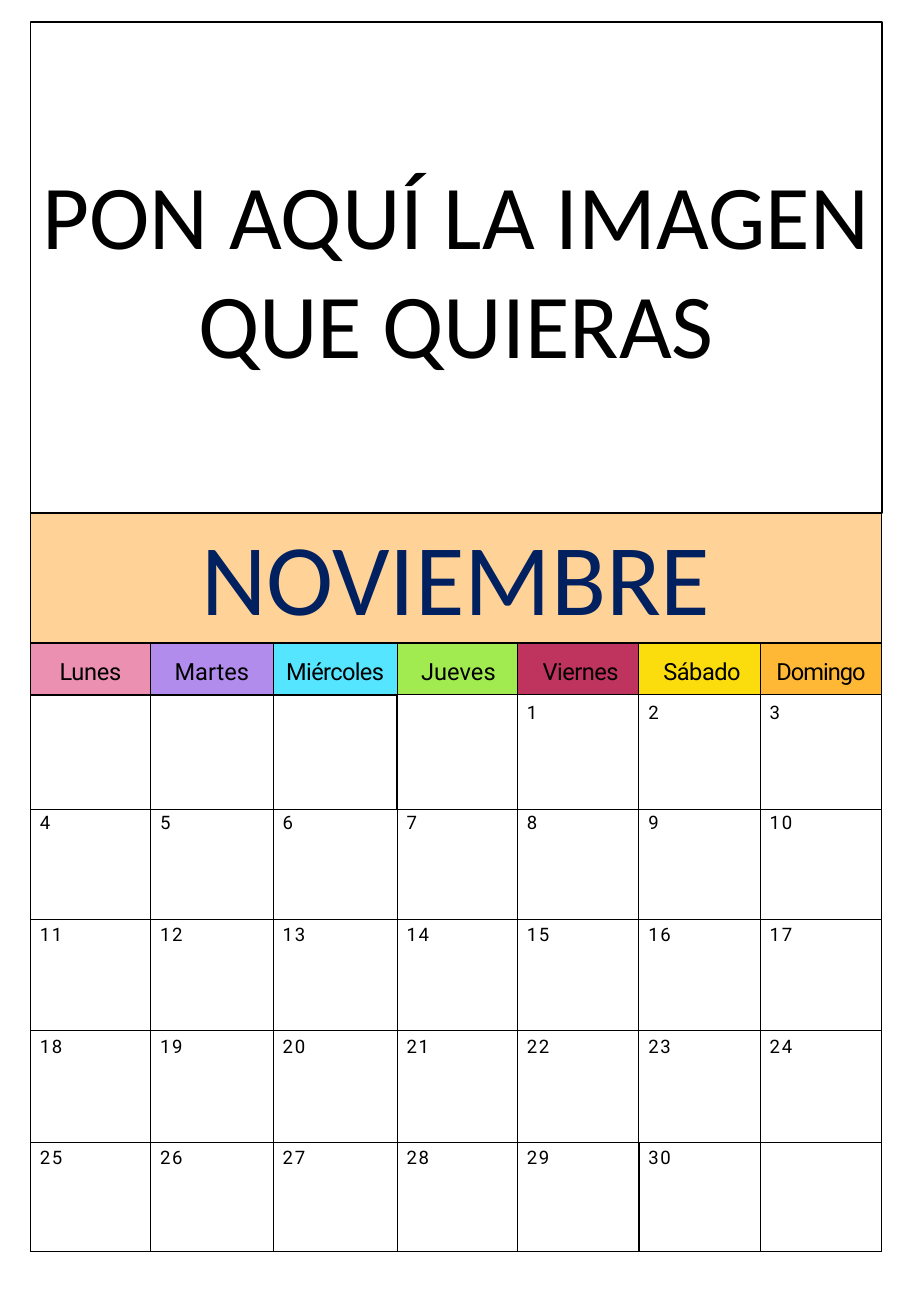
from lxml import etree
from pptx import Presentation
from pptx.dml.color import RGBColor
from pptx.enum import shapes, text
from pptx.oxml import ns
from pptx.util import Pt

BLACK = RGBColor(0, 0, 0)
WHITE = RGBColor(255, 255, 255)
NAVY = RGBColor(0x00, 0x20, 0x60)
PEACH = RGBColor(0xFF, 0xD2, 0x97)

PROMPT = "PON AQUÍ LA IMAGEN QUE QUIERAS"
MONTH = "NOVIEMBRE"
# name, fill, letter spacing, indent
WEEKDAYS = [
    ("Lunes", RGBColor(0xEB, 0x90, 0xB0), -0.2, 0),
    ("Martes", RGBColor(0xB1, 0x8C, 0xEC), 0, 0),
    ("Miércoles", RGBColor(0x55, 0xE5, 0xFF), -0.4, 0),
    ("Jueves", RGBColor(0xA1, 0xEB, 0x51), 0, 1.5),
    ("Viernes", RGBColor(0xBE, 0x34, 0x5E), -0.3, 3),
    ("Sábado", RGBColor(0xFB, 0xDD, 0x0D), -0.3, 3),
    ("Domingo", RGBColor(0xFF, 0xB8, 0x36), -0.6, 0),
]
FIRST_COLUMN, DAY_COUNT = 4, 30

LEFT, WIDTH = 18, 504.7
IMAGE_TOP, IMAGE_HEIGHT = 13, 290.9
MONTH_TOP, MONTH_HEIGHT = 303.9, 76
CALENDAR_TOP = 381.4
COLUMN_WIDTHS = [71.3, 72.7, 73.4, 71.3, 72, 72, 72]
ROW_HEIGHTS = [30.3, 68.1, 65.1, 66, 66, 64.8]
DAY_TOP_MARGINS = [4.3, 1.4, 2.9, 2.9, 2.9]
THIN, THICK = 0.75, 1
THICK_CELLS = {(1, 0), (1, 1), (1, 2), (5, 5), (5, 6)}
SIDES = {"L": (0, -1), "R": (0, 1), "T": (-1, 0), "B": (1, 0)}


def write_text(frame, content, size, font="Roboto", color=BLACK,
               align=text.PP_ALIGN.CENTER, before=0, indent=0, spacing=0):
    paragraph = frame.paragraphs[0]
    paragraph.alignment = align
    paragraph.space_before = Pt(before)
    properties = paragraph._p.get_or_add_pPr()
    properties.set("marL", str(Pt(indent)))
    properties.set("indent", "0")
    run = paragraph.add_run()
    run.text = content
    run.font.size = Pt(size)
    run.font.name = font
    run.font.color.rgb = color
    run._r.get_or_add_rPr().set("spc", str(round(spacing * 100)))


def set_borders(cell, widths):
    """Draw black borders; widths maps L, R, T and B to points."""
    properties = cell._tc.get_or_add_tcPr()
    for position, (side, width) in enumerate(widths.items()):
        line = etree.Element(ns.qn(f"a:ln{side}"), w=str(Pt(width)))
        fill = etree.SubElement(line, ns.qn("a:solidFill"))
        etree.SubElement(fill, ns.qn("a:srgbClr"), val=str(BLACK))
        properties.insert(position, line)


def add_grid(slide, top, column_widths, row_heights):
    table = slide.shapes.add_table(
        len(row_heights), len(column_widths), Pt(LEFT), Pt(top),
        Pt(sum(column_widths)), Pt(sum(row_heights))).table
    table.first_row = table.horz_banding = False
    for column, width in zip(table.columns, column_widths):
        column.width = Pt(width)
    for row, height in zip(table.rows, row_heights):
        row.height = Pt(height)
    return table


def style_cell(cell, fill, widths, top_margin, anchor):
    cell.fill.solid()
    cell.fill.fore_color.rgb = fill
    cell.margin_left = cell.margin_right = cell.margin_bottom = 0
    cell.margin_top = Pt(top_margin)
    cell.vertical_anchor = anchor
    set_borders(cell, widths)


def calendar_borders(row, column):
    """An edge is thick when a cell on either side of it is thick."""
    return {
        side: THICK if {(row, column), (row + down, column + right)} & THICK_CELLS else THIN
        for side, (down, right) in SIDES.items()
    }


def add_month(slide):
    cell = add_grid(slide, MONTH_TOP, [WIDTH], [MONTH_HEIGHT]).cell(0, 0)
    style_cell(cell, PEACH, {"L": THIN, "R": THIN, "T": THIN, "B": THICK},
               3.6, text.MSO_ANCHOR.MIDDLE)
    write_text(cell.text_frame, MONTH, 60, font="Calibri", color=NAVY, before=4.2)


def add_calendar(slide):
    table = add_grid(slide, CALENDAR_TOP, COLUMN_WIDTHS, ROW_HEIGHTS)
    for column, (name, fill, spacing, indent) in enumerate(WEEKDAYS):
        cell = table.cell(0, column)
        style_cell(cell, fill, calendar_borders(0, column), 3.6, text.MSO_ANCHOR.MIDDLE)
        write_text(cell.text_frame, name, 14, before=4.2, indent=indent, spacing=spacing)
    for week, top_margin in enumerate(DAY_TOP_MARGINS):
        row = week + 1
        for column in range(len(WEEKDAYS)):
            cell = table.cell(row, column)
            style_cell(cell, WHITE, calendar_borders(row, column),
                       top_margin, text.MSO_ANCHOR.TOP)
            day = week * len(WEEKDAYS) + column - FIRST_COLUMN + 1
            if 1 <= day <= DAY_COUNT:
                write_text(cell.text_frame, str(day), 11, align=text.PP_ALIGN.LEFT,
                           before=4.8, indent=5.6, spacing=1)


def add_image_area(slide):
    area = slide.shapes.add_shape(shapes.MSO_SHAPE.RECTANGLE, Pt(LEFT), Pt(IMAGE_TOP),
                                  Pt(WIDTH), Pt(IMAGE_HEIGHT))
    area.shadow.inherit = False
    area.fill.solid()
    area.fill.fore_color.rgb = WHITE
    area.line.color.rgb = BLACK
    area.line.width = Pt(THICK)
    area.text_frame.word_wrap = True
    area.text_frame.vertical_anchor = text.MSO_ANCHOR.MIDDLE
    write_text(area.text_frame, PROMPT, 54, font="Calibri")


def main():
    presentation = Presentation()
    presentation.slide_width = Pt(540)
    presentation.slide_height = Pt(779.76)
    slide = presentation.slides.add_slide(presentation.slide_layouts[6])
    add_month(slide)
    add_calendar(slide)
    add_image_area(slide)
    presentation.save("out.pptx")


if __name__ == "__main__":
    main()
